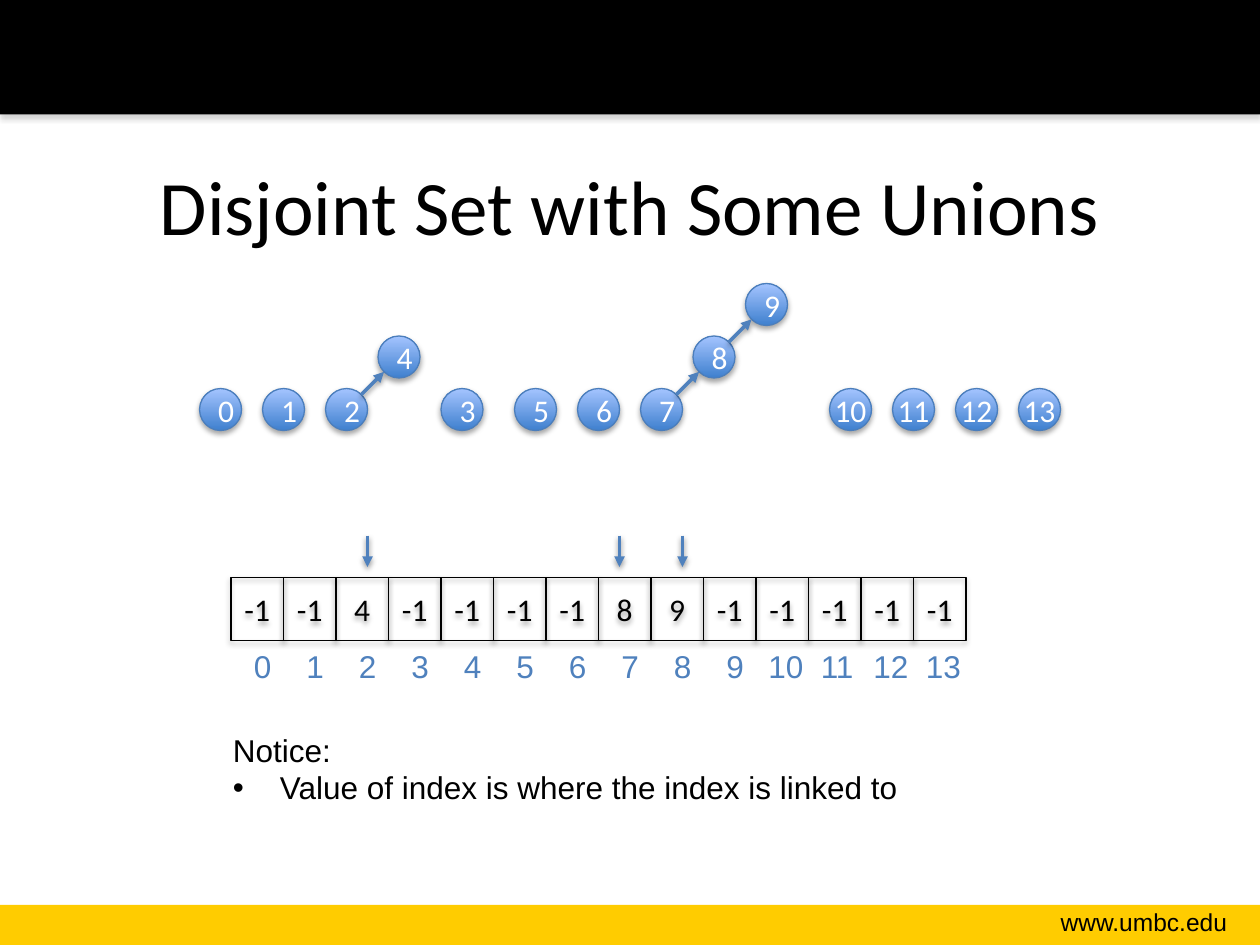
from dataclasses import dataclass
from math import sqrt
from typing import Optional

from lxml.etree import SubElement
from pptx import Presentation
from pptx.dml.color import RGBColor
from pptx.enum.shapes import MSO_CONNECTOR, MSO_SHAPE
from pptx.enum.text import MSO_ANCHOR, PP_ALIGN
from pptx.oxml.ns import qn
from pptx.util import Cm, Pt

BLACK = RGBColor(0x00, 0x00, 0x00)
WHITE = RGBColor(0xFF, 0xFF, 0xFF)
GOLD = RGBColor(0xFF, 0xCC, 0x00)
GRAY = RGBColor(0x80, 0x80, 0x80)
BLUE = RGBColor(0x4F, 0x81, 0xBD)
NODE_LINE = RGBColor(0x4B, 0x7E, 0xBC)
NODE_DARK = RGBColor(0x3F, 0x80, 0xCE)
NODE_LIGHT = RGBColor(0xA4, 0xC4, 0xFF)

UNIT = 2.54 / 12  # the drawing sits on a grid of twelve units to the inch
NODE_SIZE = 4
CELL_WIDTH, CELL_HEIGHT = 5, 6
ARRAY_LEFT, ARRAY_TOP = 22, 55
BASE_ROW = 37
POINTER_COLUMNS = (35, 59, 65)


@dataclass
class Node:
    column: float
    row: float = BASE_ROW
    parent: Optional[int] = None


NODES = [
    Node(19), Node(25), Node(31, parent=4), Node(42), Node(36, 32),
    Node(49), Node(55), Node(61, parent=8), Node(66, 32, parent=9),
    Node(71, 27), Node(79), Node(85), Node(91), Node(97),
]


def grid(units: float) -> Cm:
    return Cm(units * UNIT)


def add_shadow(shape, color: RGBColor = BLACK, distance: float = 1.8,
               opacity: int = 35) -> None:
    """Append a downward shadow; the line must be set beforehand."""
    effects = SubElement(shape._element.spPr, qn("a:effectLst"))
    shadow = SubElement(effects, qn("a:outerShdw"), blurRad=str(Pt(3.1)),
                        dist=str(Pt(distance)), dir="5400000", rotWithShape="0")
    fill = SubElement(shadow, qn("a:srgbClr"), val=str(color))
    SubElement(fill, qn("a:alpha"), val=str(opacity * 1000))


def format_text(paragraph, size: float, font: str, color: RGBColor,
                alignment=PP_ALIGN.LEFT) -> None:
    paragraph.alignment = alignment
    paragraph.font.size = Pt(size)
    paragraph.font.name = font
    paragraph.font.color.rgb = color


def add_bar(slide, top: float, height: float, color: RGBColor):
    """Add a full-width bar, measured in centimetres."""
    bar = slide.shapes.add_shape(MSO_SHAPE.RECTANGLE, 0, Cm(top), Cm(25.4), Cm(height))
    bar.fill.solid()
    bar.fill.fore_color.rgb = color
    bar.line.fill.background()
    bar.shadow.inherit = False
    return bar


def add_label(slide, left, top, width, height, text: str, size: float,
              color: RGBColor, alignment=PP_ALIGN.LEFT, wrap: bool = False):
    box = slide.shapes.add_textbox(left, top, width, height)
    box.text_frame.word_wrap = wrap
    box.text_frame.text = text
    for paragraph in box.text_frame.paragraphs:
        format_text(paragraph, size, "Arial", color, alignment)
    return box


def add_outlined_shape(slide, kind, column: float, row: float, width: float,
                       height: float, text: str, line_color: RGBColor,
                       text_color: RGBColor):
    shape = slide.shapes.add_shape(kind, grid(column), grid(row),
                                   grid(width), grid(height))
    shape.fill.background()
    shape.line.color.rgb = line_color
    shape.line.width = Pt(0.75)
    add_shadow(shape)
    frame = shape.text_frame
    frame.word_wrap = True
    frame.vertical_anchor = MSO_ANCHOR.MIDDLE
    frame.text = text
    format_text(frame.paragraphs[0], 18, "Calibri", text_color, PP_ALIGN.CENTER)
    return shape


def add_node(slide, index: int, node: Node) -> None:
    circle = add_outlined_shape(slide, MSO_SHAPE.OVAL, node.column, node.row,
                                NODE_SIZE, NODE_SIZE, str(index), NODE_LINE, WHITE)
    circle.text_frame.word_wrap = index < 10
    circle.fill.gradient()
    circle.fill.gradient_angle = 90
    for stop, color in zip(circle.fill.gradient_stops, (NODE_DARK, NODE_LIGHT)):
        stop.color.rgb = color


def add_cell(slide, index: int, node: Node) -> None:
    """Add an array cell with its index below it."""
    column = ARRAY_LEFT + index * CELL_WIDTH
    value = "-1" if node.parent is None else str(node.parent)
    add_outlined_shape(slide, MSO_SHAPE.RECTANGLE, column, ARRAY_TOP,
                       CELL_WIDTH, CELL_HEIGHT, value, BLACK, BLACK)
    offset, width = (1, 0.86) if index < 10 else (0, 1.22)
    add_label(slide, grid(column + offset), grid(ARRAY_TOP + CELL_HEIGHT),
              Cm(width), Cm(1.02), str(index), 18, BLUE)


def add_arrow(slide, start_x: float, start_y: float, end_x: float, end_y: float) -> None:
    arrow = slide.shapes.add_connector(MSO_CONNECTOR.STRAIGHT, grid(start_x),
                                       grid(start_y), grid(end_x), grid(end_y))
    arrow.line.color.rgb = BLUE
    arrow.line.width = Pt(2)
    SubElement(arrow.line._get_or_add_ln(), qn("a:tailEnd"), type="triangle")
    add_shadow(arrow, distance=1.6, opacity=38)


def add_union(slide, child: Node, parent: Node) -> None:
    """Link the upper right of the child to the lower left of its parent."""
    radius = NODE_SIZE / 2
    reach = radius / sqrt(2)
    near, far = radius - reach, radius + reach
    add_arrow(slide, child.column + far, child.row + near,
              parent.column + near, parent.row + far)


def add_notice(slide) -> None:
    box = add_label(slide, grid(21), grid(69), Cm(14.05), Cm(1.8),
                    "Notice:\nValue of index is where the index is linked to",
                    18, BLACK)
    properties = box.text_frame.paragraphs[1]._p.get_or_add_pPr()
    indent = Cm(0.95)
    properties.set("marL", str(indent))
    properties.set("indent", str(-indent))
    bullet_font = properties.makeelement(qn("a:buFont"), {"typeface": "Arial"})
    bullet = properties.makeelement(qn("a:buChar"), {"char": "•"})
    properties.insert(0, bullet_font)
    properties.insert(1, bullet)


def main() -> None:
    presentation = Presentation()
    presentation.slide_width, presentation.slide_height = Cm(25.4), Cm(19.05)
    slide = presentation.slides.add_slide(presentation.slide_layouts[5])

    add_bar(slide, 18.24, 0.81, GOLD)
    header = add_bar(slide, 0, 2.31, BLACK)
    header._element.spPr.remove(header._element.spPr.find(qn("a:effectLst")))
    add_shadow(header, GRAY)
    add_label(slide, Cm(19.94), Cm(18.16), Cm(5.05), Cm(0.86), "www.umbc.edu",
              14, BLACK, PP_ALIGN.RIGHT, wrap=True)

    title = slide.shapes.title
    title.left, title.top, title.width, title.height = map(grid, (6, 12, 108, 15))
    title.text_frame.text = "Disjoint Set with Some Unions"
    title.text_frame.vertical_anchor = MSO_ANCHOR.MIDDLE
    format_text(title.text_frame.paragraphs[0], 44, "Calibri", BLACK, PP_ALIGN.CENTER)

    for index, node in enumerate(NODES):
        add_node(slide, index, node)
        add_cell(slide, index, node)
    for node in NODES:
        if node.parent is not None:
            add_union(slide, node, NODES[node.parent])
    for column in POINTER_COLUMNS:
        add_arrow(slide, column, 51, column, 54)
    add_notice(slide)

    presentation.save("out.pptx")


if __name__ == "__main__":
    main()
